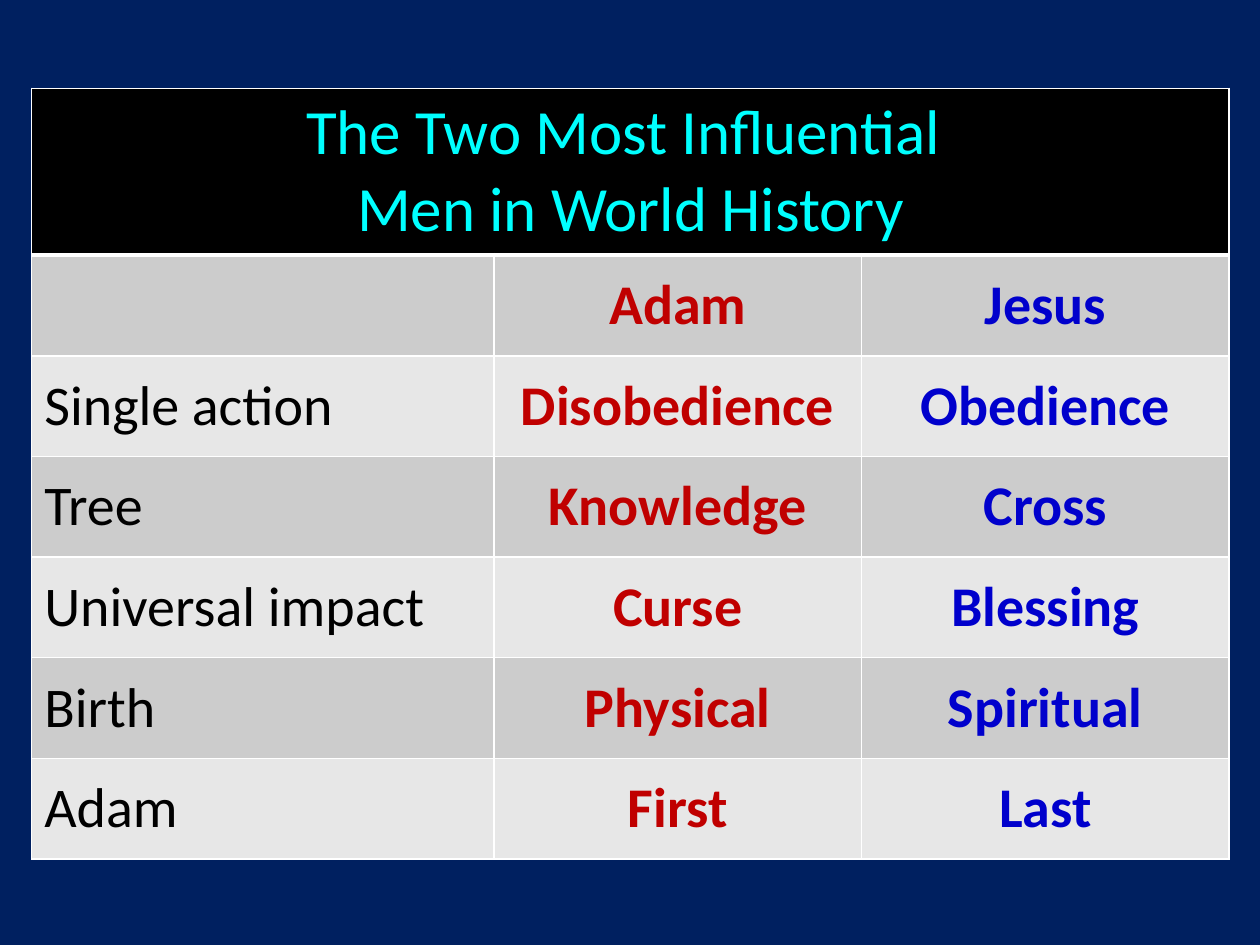
"""Build a slide with a table comparing Adam and Jesus."""
from dataclasses import dataclass

from lxml import etree
from pptx import Presentation
from pptx import util as u
from pptx.dml.color import RGBColor
from pptx.enum import text
from pptx.oxml import ns


@dataclass(frozen=True)
class Theme:
    font: str = "Calibri"
    title_size: int = 36
    body_size: int = 32
    background: str = "002060"
    header: str = "000000"
    bands: tuple = ("CCCCCC", "E7E7E7")
    border: str = "FFFFFF"
    title: str = "00FFFF"
    columns: tuple = ("000000", "C00000", "0000CC")
    thin: int = 1
    thick: int = 3


class SlideBuilder:
    def __init__(self, presentation, theme):
        self.theme = theme
        self.slide = presentation.slides.add_slide(presentation.slide_layouts[6])
        fill = self.slide.background.fill
        fill.solid()
        fill.fore_color.rgb = RGBColor.from_string(theme.background)

    def add_table(self, left, top, column_widths, row_heights):
        shape = self.slide.shapes.add_table(
            len(row_heights), len(column_widths), u.Cm(left), u.Cm(top),
            u.Cm(sum(column_widths)), u.Cm(sum(row_heights)))
        table = shape.table
        for column, width in zip(table.columns, column_widths):
            column.width = u.Cm(width)
        for row, height in zip(table.rows, row_heights):
            row.height = u.Cm(height)
        return table

    def fill_cell(self, cell, color, top, bottom):
        cell.fill.solid()
        cell.fill.fore_color.rgb = RGBColor.from_string(color)
        thin = self.theme.thin
        properties = cell._tc.get_or_add_tcPr()
        sides = {"lnL": thin, "lnR": thin, "lnT": top, "lnB": bottom}
        for position, (side, width) in enumerate(sides.items()):
            line = etree.Element(ns.qn(f"a:{side}"), w=str(u.Pt(width)))
            solid = etree.SubElement(line, ns.qn("a:solidFill"))
            etree.SubElement(solid, ns.qn("a:srgbClr"), val=self.theme.border)
            properties.insert(position, line)

    def write_cell(self, cell, content, size, color, bold, centered):
        cell.text_frame.text = content
        for paragraph in cell.text_frame.paragraphs:
            paragraph.alignment = text.PP_ALIGN.CENTER if centered else text.PP_ALIGN.LEFT
            for run in paragraph.runs:
                run.font.name = self.theme.font
                run.font.size = u.Pt(size)
                run.font.bold = bold
                run.font.color.rgb = RGBColor.from_string(color)

    def add_comparison(self, title, rows):
        theme = self.theme
        table = self.add_table(0.64, 1.78, [9.32, 7.41, 7.41], [3.35] + [2.03] * len(rows))
        for cell in table.rows[0].cells:
            self.fill_cell(cell, theme.header, theme.thin, theme.thick)
        table.cell(0, 0).merge(table.cell(0, 2))
        self.write_cell(table.cell(0, 0), title, theme.title_size, theme.title, False, True)
        for row_index, row in enumerate(rows, 1):
            band = theme.bands[(row_index - 1) % 2]
            top = theme.thick if row_index == 1 else theme.thin
            for column_index, content in enumerate(row):
                cell = table.cell(row_index, column_index)
                is_value = column_index > 0
                self.fill_cell(cell, band, top, theme.thin)
                cell.vertical_anchor = text.MSO_ANCHOR.MIDDLE
                self.write_cell(cell, content, theme.body_size,
                                theme.columns[column_index], is_value, is_value)


def main():
    presentation = Presentation()
    presentation.slide_width = u.Cm(25.4)
    presentation.slide_height = u.Cm(19.05)
    builder = SlideBuilder(presentation, Theme())
    builder.add_comparison("The Two Most Influential \nMen in World History", [
        ("", "Adam", "Jesus"),
        ("Single action", "Disobedience", "Obedience"),
        ("Tree", "Knowledge", "Cross"),
        ("Universal impact", "Curse", "Blessing"),
        ("Birth", "Physical", "Spiritual"),
        ("Adam", "First", "Last"),
    ])
    presentation.save("out.pptx")


if __name__ == "__main__":
    main()
